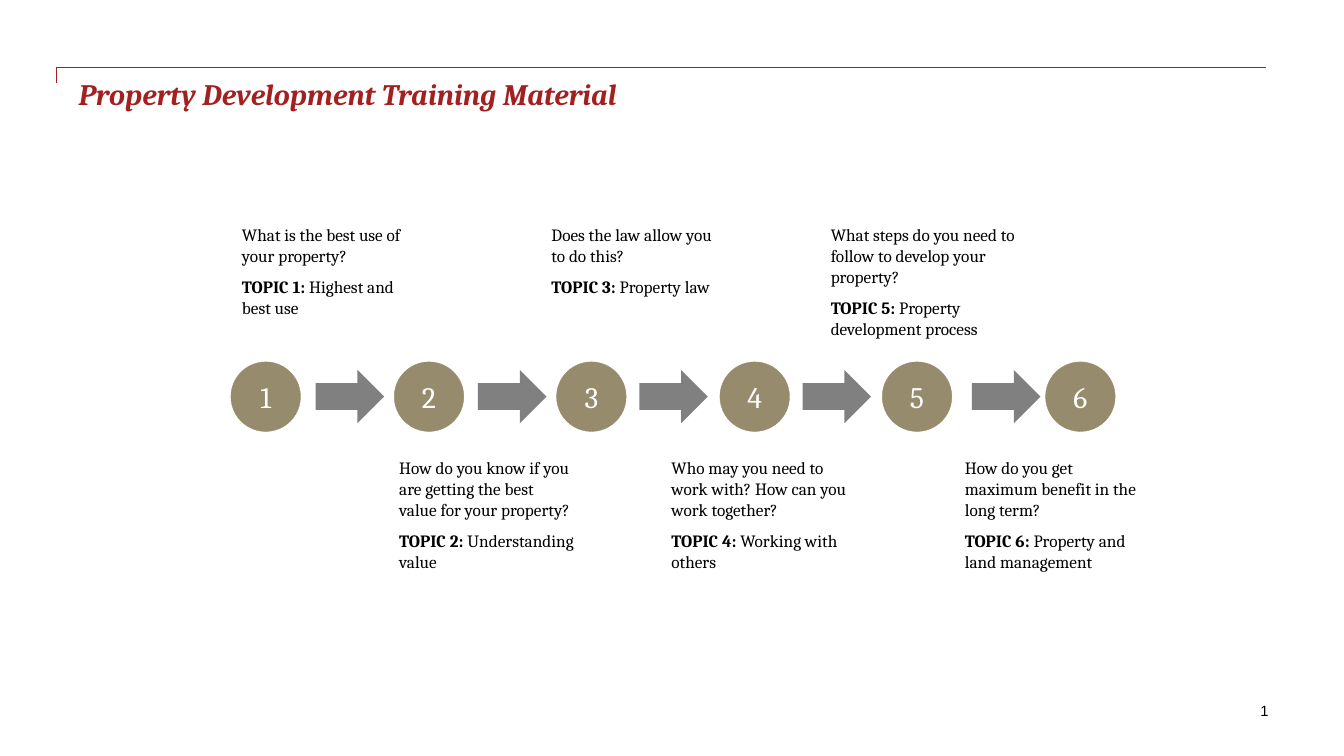
from pptx import Presentation
from pptx.dml.color import RGBColor
from pptx.enum.shapes import MSO_SHAPE
from pptx.enum.text import MSO_ANCHOR, PP_ALIGN
from pptx.util import Pt

EMU_PER_PX = 9144  # 100 px to the inch

COLORS = {
    "accent": "A32020",
    "circle": "968C6D",
    "arrow": "808080",
    "text": "000000",
    "number": "FFFFFF",
}

# left, top, width, height, question, topic
TOPICS = [
    (240, 223, 174, 122, "What is the best use of your property?", "Highest and best use"),
    (396, 454, 174, 122, "How do you know if you are getting the best value for your property?",
     "Understanding value"),
    (547, 223, 174, 96, "Does the law allow you to do this?", "Property law"),
    (666, 454, 174, 122, "Who may you need to work with? How can you work together?",
     "Working with others"),
    (824, 223, 190, 122, "What steps do you need to follow to develop your property?",
     "Property development process"),
    (957, 454, 174, 122, "How do you get maximum benefit in the long term?",
     "Property and land management"),
]
ARROW_LEFTS = [313, 474, 634, 796, 964]
FIRST_CIRCLE_LEFT = 229
CIRCLE_STEP = 161.6


def px(*lengths):
    return [length * EMU_PER_PX for length in lengths]


def color(name):
    return RGBColor.from_string(COLORS[name])


class SlideBuilder:
    def __init__(self, page, font="Cambria"):
        self.page = page
        self.font = font

    def style(self, para, size, color_name, font=None):
        para.font.name = font or self.font
        para.font.size = Pt(size)
        para.font.color.rgb = color(color_name)

    def corner_rule(self, points):
        """Draw an open line through the points."""
        start, *rest = [px(*point) for point in points]
        builder = self.page.shapes.build_freeform(*start)
        builder.add_line_segments(rest, close=False)
        rule = builder.convert_to_shape()
        rule.shadow.inherit = False
        rule.fill.background()
        rule.line.color.rgb = color("accent")
        rule.line.width = Pt(1)

    def text_box(self, left, top, width, height, margin=0):
        box = self.page.shapes.add_textbox(*px(left, top, width, height))
        frame = box.text_frame
        frame.word_wrap = True
        frame.margin_left = frame.margin_right = margin * EMU_PER_PX
        frame.margin_top = frame.margin_bottom = 0
        return frame

    def title(self, text, *place):
        para = self.text_box(*place).paragraphs[0]
        para.text = text
        self.style(para, 21.2, "accent")
        para.font.bold = para.font.italic = True

    def page_number(self, text, *place):
        frame = self.text_box(*place, margin=10)
        frame.vertical_anchor = MSO_ANCHOR.MIDDLE
        para = frame.paragraphs[0]
        para.text = text
        para.alignment = PP_ALIGN.RIGHT
        self.style(para, 10.6, "text", "Arial")

    def topic(self, number, question, topic, *place):
        frame = self.text_box(*place)
        question_para, topic_para = frame.paragraphs[0], frame.add_paragraph()
        question_para.text = question
        label = topic_para.add_run()
        label.text = f"TOPIC {number}: "
        label.font.bold = True
        topic_para.add_run().text = topic
        for para in (question_para, topic_para):
            self.style(para, 12.3, "text")
            para.space_after = Pt(7.5)

    def shape(self, preset, fill, *place):
        shape = self.page.shapes.add_shape(preset, *px(*place))
        shape.shadow.inherit = False
        shape.fill.solid()
        shape.fill.fore_color.rgb = color(fill)
        shape.line.fill.background()
        return shape

    def circle(self, number, left):
        circle = self.shape(MSO_SHAPE.OVAL, "circle", left, 359, 69, 69)
        circle.line.color.rgb = color("circle")
        circle.line.width = Pt(0.25)
        frame = circle.text_frame
        frame.vertical_anchor = MSO_ANCHOR.MIDDLE
        para = frame.paragraphs[0]
        para.text = str(number)
        para.alignment = PP_ALIGN.CENTER
        self.style(para, 21.2, "number")

    def arrow(self, left):
        self.shape(MSO_SHAPE.RIGHT_ARROW, "arrow", left, 367, 68, 53)


def main():
    deck = Presentation()
    deck.slide_width, deck.slide_height = px(1333, 750)
    builder = SlideBuilder(deck.slides.add_slide(deck.slide_layouts[6]))

    builder.corner_rule([(56, 82), (56, 67), (1256, 67)])
    builder.title("Property Development Training Material", 78, 75, 1178, 100)
    for index, (left, top, width, height, question, topic) in enumerate(TOPICS):
        builder.circle(index + 1, round(FIRST_CIRCLE_LEFT + index * CIRCLE_STEP))
        builder.topic(index + 1, question, topic, left, top, width, height)
    for left in ARROW_LEFTS:
        builder.arrow(left)
    builder.page_number("1", 904, 687, 364, 35)

    deck.save("out.pptx")


if __name__ == "__main__":
    main()
